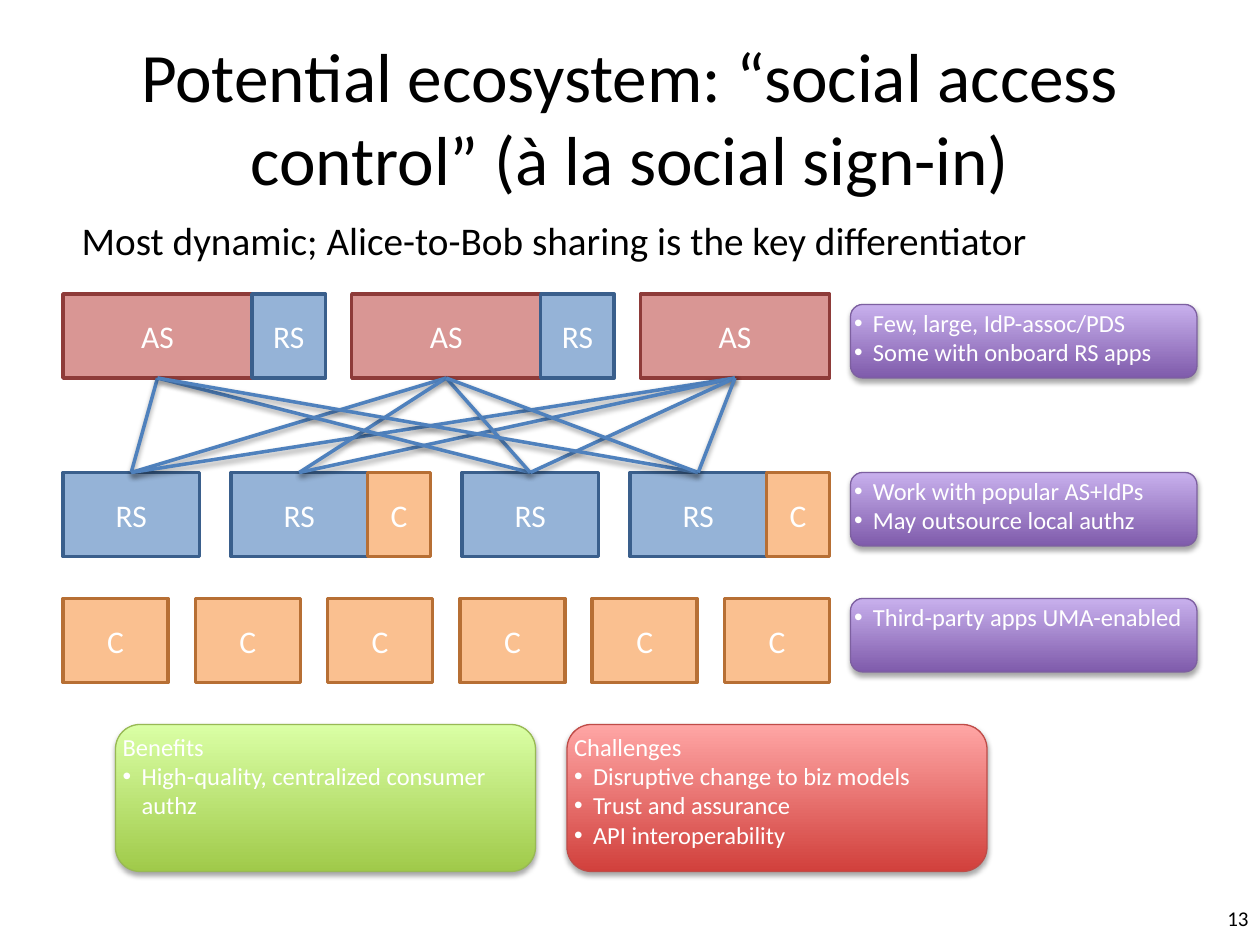
from pptx import Presentation
from pptx.dml.color import RGBColor
from pptx.enum.shapes import MSO_CONNECTOR, MSO_SHAPE
from pptx.enum.text import MSO_ANCHOR, PP_ALIGN
from pptx.oxml import parse_xml
from pptx.oxml.ns import nsdecls
from pptx.util import Pt

RECT, ROUND = MSO_SHAPE.RECTANGLE, MSO_SHAPE.ROUNDED_RECTANGLE
STRAIGHT = MSO_CONNECTOR.STRAIGHT
TOP, MID = MSO_ANCHOR.TOP, MSO_ANCHOR.MIDDLE
LEFT, CENTER, RIGHT = PP_ALIGN.LEFT, PP_ALIGN.CENTER, PP_ALIGN.RIGHT

ROLES = {
    "AS": ("D99694", "8E3B39"),
    "RS": ("95B3D7", "3A5F8C"),
    "C": ("FAC090", "B76F34"),
}
PURPLE = ("7F5BAB", "C8B0ED", "7D60A0")
GREEN = ("A0CA4A", "DAFFA5", "98B955")
RED = ("D1403C", "FFA6A5", "BF4C48")


def color(code):
    return RGBColor.from_string(code)


def apply(item, values):
    for name, value in values.items():
        setattr(item, name, value)


class Deck:
    font = "Calibri"
    dark, light, link = "000000", "FFFFFF", "4F81BD"

    def __init__(self, wide, high):
        self.show = Presentation()
        apply(self.show, {"slide_width": Pt(wide), "slide_height": Pt(high)})
        self.slide = self.show.slides.add_slide(self.show.slide_layouts[6])
        self.shapes = self.slide.shapes

    def put(self, para, text, size, ink, align):
        para.alignment = align
        run = para.add_run()
        run.text = text
        apply(run.font, {"name": self.font, "size": Pt(size)})
        run.font.color.rgb = color(ink)

    def bullet(self, para):
        props = para._p.get_or_add_pPr()
        props.set("marL", str(Pt(10.8)))
        props.set("indent", str(-Pt(10.8)))
        props.append(parse_xml(f'<a:buFont {nsdecls("a")} typeface="Arial"/>'))
        props.append(parse_xml(f'<a:buChar {nsdecls("a")} char="•"/>'))

    def shade(self, shape, alpha, drop):
        shape._element.spPr.append(parse_xml(
            f'<a:effectLst {nsdecls("a")}><a:outerShdw blurRad="{Pt(3.1)}" '
            f'dist="{Pt(drop)}" dir="5400000" rotWithShape="0">'
            f'<a:srgbClr val="000000"><a:alpha val="{alpha * 1000}"/>'
            '</a:srgbClr></a:outerShdw></a:effectLst>'))

    def label(self, text, place, size, align=LEFT, anchor=TOP):
        frame = self.shapes.add_textbox(*map(Pt, place)).text_frame
        apply(frame, {"word_wrap": True, "vertical_anchor": anchor})
        self.put(frame.paragraphs[0], text, size, self.dark, align)

    def block(self, role, left, top, wide):
        shape = self.shapes.add_shape(RECT, Pt(left), Pt(top), Pt(wide), Pt(48))
        shape.shadow.inherit = False
        fill, edge = ROLES[role]
        shape.fill.solid()
        shape.fill.fore_color.rgb = color(fill)
        shape.line.color.rgb = color(edge)
        shape.line.width = Pt(2)
        shape.text_frame.vertical_anchor = MID
        self.put(shape.text_frame.paragraphs[0], role, 18, self.light, CENTER)
        return shape

    def card(self, place, tones, items, head=None):
        shape = self.shapes.add_shape(ROUND, *map(Pt, place))
        *ends, edge = tones
        shape.fill.gradient()
        shape.fill.gradient_angle = 90
        for stop, tone in zip(shape.fill.gradient_stops, ends):
            stop.color.rgb = color(tone)
        shape.line.color.rgb = color(edge)
        shape.line.width = Pt(0.75)
        self.shade(shape, 35, 1.8)
        frame = shape.text_frame
        apply(frame, {"word_wrap": True, "vertical_anchor": TOP,
                      "margin_left": 0, "margin_top": 0,
                      "margin_right": 0, "margin_bottom": 0})
        lines = [head, *items] if head else items
        for i, text in enumerate(lines):
            para = frame.add_paragraph() if i else frame.paragraphs[0]
            if text != head:
                self.bullet(para)
            self.put(para, text, 14, self.light, LEFT)

    def join(self, lower, upper):
        line = self.shapes.add_connector(STRAIGHT, 0, 0, 0, 0)
        line.begin_connect(lower, 0)
        line.end_connect(upper, 2)
        line.line.color.rgb = color(self.link)
        line.line.width = Pt(2)
        self.shade(line, 38, 1.6)


def main():
    deck = Deck(720, 540)
    deck.label("Potential ecosystem: “social access control” (à la social sign-in)",
               (36, 21.6, 648, 90), 39.6, CENTER, MID)
    deck.label("13", (692.6, 514, 28, 28.8), 12, RIGHT)
    deck.label("Most dynamic; Alice-to-Bob sharing is the key differentiator",
               (39.6, 120, 612, 30), 22.4)

    owners = [deck.block("AS", 36 + 165 * i, 168, 108) for i in range(3)]
    for i in range(2):
        deck.block("RS", 144 + 165 * i, 168, 42)
    hosts = [deck.block("RS", left, 270, 78) for left in (36, 132, 264, 360)]
    for left in (210, 438):
        deck.block("C", left, 270, 36)
    for i in range(6):
        deck.block("C", 36 + 75.6 * i, 342, 60)

    links = [(0, 1, 2), (1, 2), (0, 1, 2), (0, 1, 2)]
    for host, ends in zip(hosts, links):
        for end in ends:
            deck.join(host, owners[end])

    notes = [
        (174, ["Few, large, IdP-assoc/PDS", "Some with onboard RS apps"]),
        (270, ["Work with popular AS+IdPs", "May outsource local authz"]),
        (342, ["Third-party apps UMA-enabled"]),
    ]
    for top, items in notes:
        deck.card((486, top, 198, 42), PURPLE, items)
    deck.card((66, 414, 240, 84), GREEN,
              ["High-quality, centralized consumer authz"], "Benefits")
    deck.card((324, 414, 240, 84), RED,
              ["Disruptive change to biz models", "Trust and assurance",
               "API interoperability"], "Challenges")
    deck.show.save("out.pptx")


if __name__ == "__main__":
    main()
